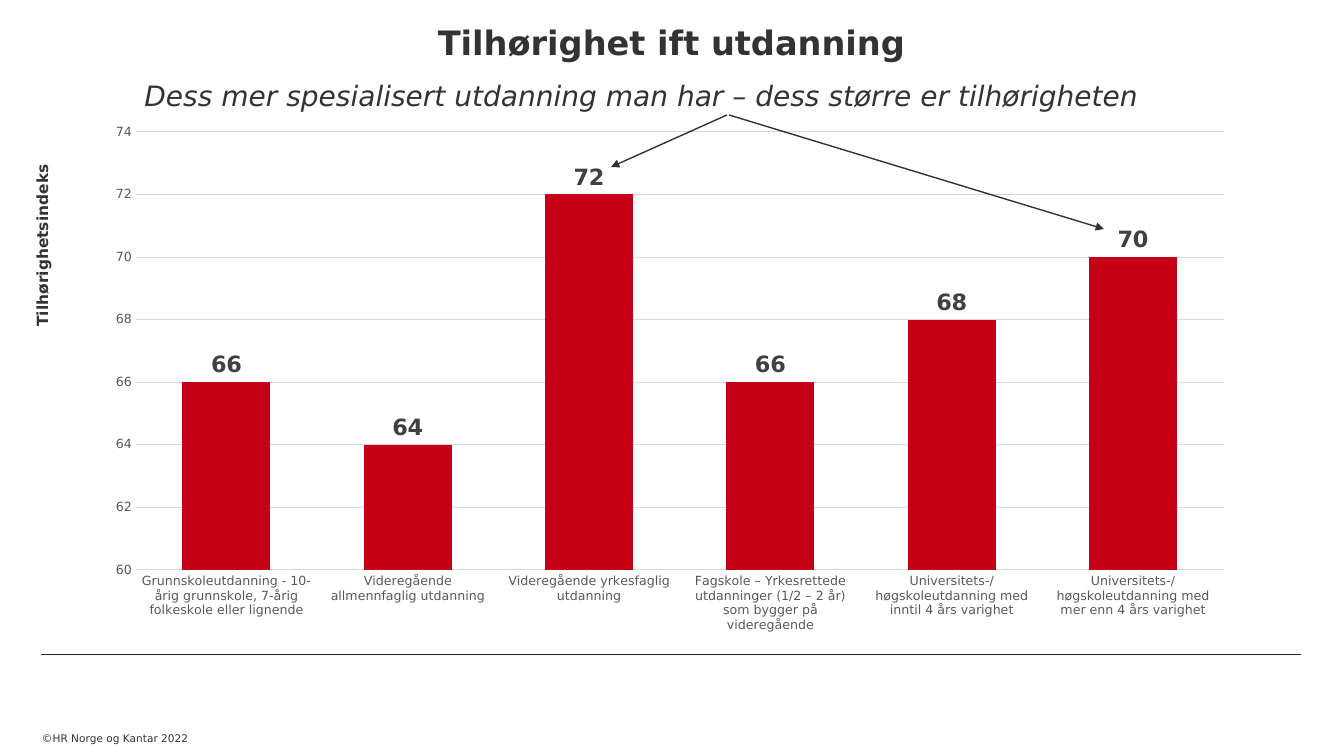
from dataclasses import dataclass

from lxml.etree import SubElement as Sub
from pptx import Presentation
from pptx.chart.data import CategoryChartData as Data
from pptx.dml.color import RGBColor as RGB
from pptx.enum.chart import XL_CHART_TYPE as Kind, XL_LABEL_POSITION as Spot, XL_TICK_MARK as Tick
from pptx.enum.shapes import MSO_CONNECTOR as Link
from pptx.enum.text import MSO_ANCHOR as Anchor, PP_ALIGN as Align
from pptx.oxml import parse_xml
from pptx.oxml.ns import nsdecls, qn
from pptx.util import Pt


@dataclass(frozen=True)
class Theme:
    font: str = "DejaVu Sans"
    ink: str = "333333"
    rule: str = "262626"
    bar: str = "C50017"
    grid: str = "D9D9D9"
    tick: str = "595959"
    label: str = "404040"
    title: int = 24
    lead: int = 20
    value: int = 16
    name: int = 11
    axis: int = 9
    note: float = 7.5


T = Theme()
PX = 914400 / 100.8  # EMU in one px

BARS = {
    "Grunnskoleutdanning - 10-årig grunnskole, 7-årig folkeskole eller lignende": 66,
    "Videregående allmennfaglig utdanning": 64,
    "Videregående yrkesfaglig utdanning": 72,
    "Fagskole – Yrkesrettede utdanninger (1/2 – 2 år) som bygger på videregående": 66,
    "Universitets-/høgskoleutdanning med inntil 4 års varighet": 68,
    "Universitets-/høgskoleutdanning med mer enn 4 års varighet": 70,
}


def emu(*nums):
    return [round(n * PX) for n in nums]


def style(font, size, color, bold=False, italic=False):
    font.name, font.size = T.font, Pt(size)
    font.bold, font.italic = bold, italic
    font.color.rgb = RGB.from_string(color)


def write(slide, box, text, size, shape=None, align=Align.CENTER,
          anchor=Anchor.MIDDLE, pad=(0, 0, 0, 0), turn=0, **form):
    shape = shape or slide.shapes.add_textbox(0, 0, 0, 0)
    shape.left, shape.top, shape.width, shape.height = emu(*box)
    shape.rotation = turn
    frame = shape.text_frame
    frame.word_wrap = False
    frame.vertical_anchor = anchor
    (frame.margin_left, frame.margin_top,
     frame.margin_right, frame.margin_bottom) = emu(*pad)
    par = frame.paragraphs[0]
    par.alignment = align
    run = par.add_run()
    run.text = text
    style(run.font, size, T.ink, **form)


def line(slide, start, end, color, width, arrow=False):
    link = slide.shapes.add_connector(Link.STRAIGHT, *emu(*start, *end))
    link.line.color.rgb = RGB.from_string(color)
    link.line.width = Pt(width)
    props = link._element.spPr
    if arrow:
        Sub(props.find(qn("a:ln")), qn("a:tailEnd"), type="triangle")
    Sub(props, qn("a:effectLst"))


def head(slide, box):
    x, y, w, h = box
    write(slide, (x + 298, y, 491, 50), "Tilhørighet ift utdanning", T.title,
          shape=slide.shapes.title, bold=True)
    write(slide, (x, y + 56, w, h - 56),
          "Dess mer spesialisert utdanning man har – dess større er tilhørigheten",
          T.lead, italic=True)


def place(chart, x, y, w, h):
    """Fix the inner plot area, in shares of the chart."""
    area = chart._chartSpace.chart.plotArea
    for old in area.findall(qn("c:layout")):
        area.remove(old)
    area.insert(0, parse_xml(
        f'<c:layout {nsdecls("c")}><c:manualLayout><c:layoutTarget val="inner"/>'
        '<c:xMode val="edge"/><c:yMode val="edge"/>'
        f'<c:x val="{x:.3f}"/><c:y val="{y:.3f}"/><c:w val="{w:.3f}"/><c:h val="{h:.3f}"/>'
        '</c:manualLayout></c:layout>'))


def graph(slide, box):
    x, y, w, h = box
    data = Data(number_format="0")
    data.categories = list(BARS)
    data.add_series("Tilhørighetsindeks", list(BARS.values()))
    chart = slide.shapes.add_chart(Kind.COLUMN_CLUSTERED, *emu(*box), data).chart
    chart.has_legend = chart.has_title = False
    style(chart.font, T.axis, T.tick)
    place(chart, 55 / w, 17 / h, 1088 / w, 438 / h)

    # Axes
    cats, vals = chart.category_axis, chart.value_axis
    for axis in (cats, vals):
        axis.major_tick_mark = axis.minor_tick_mark = Tick.NONE
        style(axis.tick_labels.font, T.axis, T.tick)
    vals.minimum_scale, vals.maximum_scale, vals.major_unit = 60, 74, 2
    vals.format.line.fill.background()
    for edge in (cats.format.line, vals.major_gridlines.format.line):
        edge.color.rgb = RGB.from_string(T.grid)
        edge.width = Pt(0.75)

    # Columns and their values
    plot = chart.plots[0]
    plot.gap_width, plot.overlap, plot.vary_by_categories = 106, -27, False
    fill = plot.series[0].format.fill
    fill.solid()
    fill.fore_color.rgb = RGB.from_string(T.bar)
    plot.has_data_labels = True
    tags = plot.data_labels
    tags.show_value, tags.position = True, Spot.OUTSIDE_END
    tags.number_format, tags.number_format_is_linked = "0", False
    style(tags.font, T.value, T.label, bold=True)

    # Name of the value axis
    write(slide, (x - 130, y + 116, 182, 29), "Tilhørighetsindeks", T.name,
          turn=270, bold=True)

    # Arrows to the two highest columns
    for start, end in ((646, 530), (648, 1023)):
        drop = 52 if end < start else 114
        line(slide, (x + start, y), (x + end, y + drop), T.ink, 1, arrow=True)


def foot(slide, box):
    x, y, w, h = box
    line(slide, (x, y), (x + w, y), T.rule, 0.75)
    write(slide, (x + 1, y + 53, 238, h - 53), "©HR Norge og Kantar 2022", T.note,
          align=Align.LEFT, anchor=Anchor.BOTTOM, pad=(0, 0, 0, 29))


def main():
    deck = Presentation()
    deck.slide_width, deck.slide_height = emu(1344, 756)
    slide = deck.slides.add_slide(deck.slide_layouts[5])
    foot(slide, (41, 655, 1260, 111))
    graph(slide, (81, 115, 1166, 529))
    head(slide, (128, 17, 1027, 100))
    deck.save("out.pptx")


if __name__ == "__main__":
    main()
